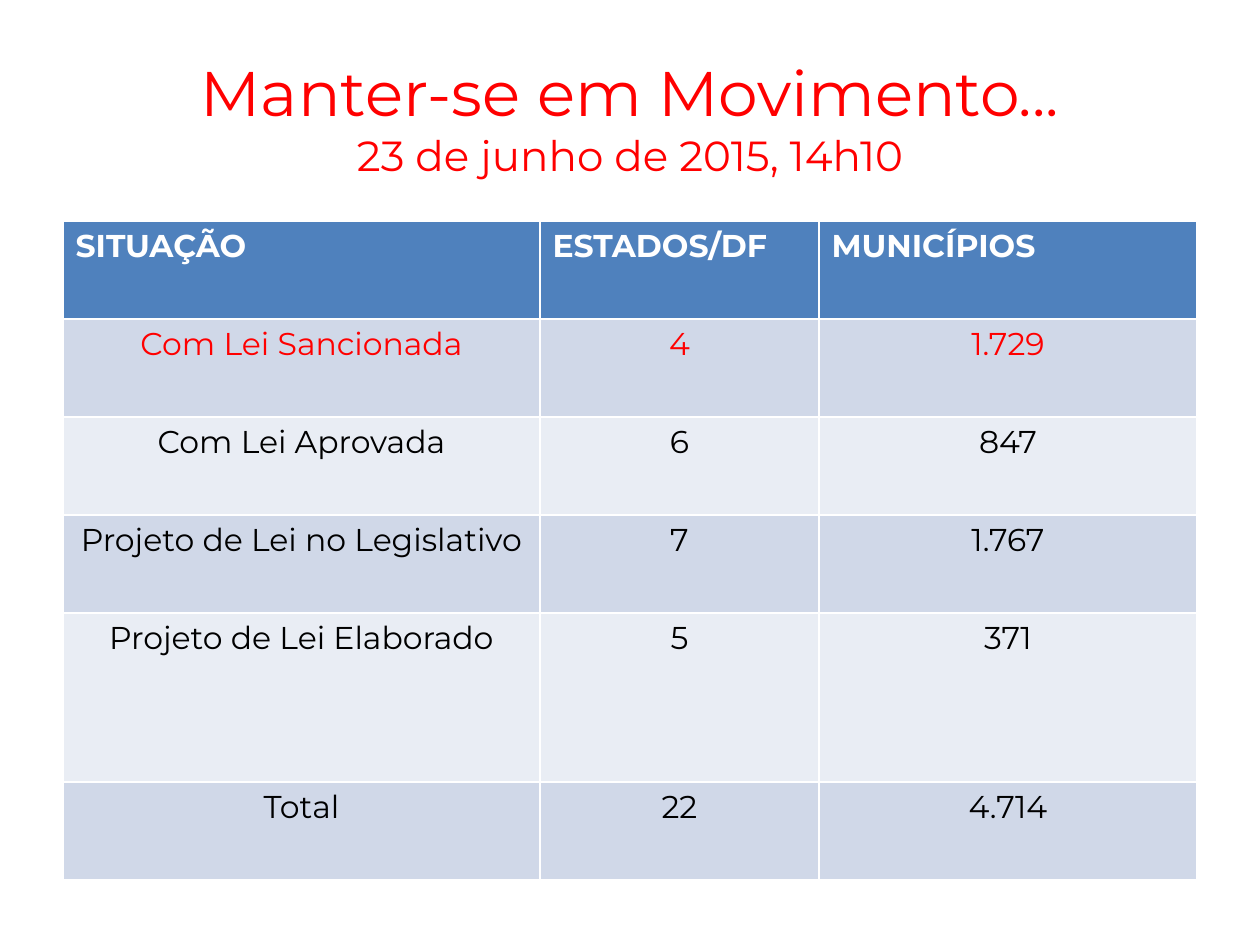
from pptx import Presentation
from pptx.dml.color import RGBColor
from pptx.enum.text import MSO_ANCHOR, PP_ALIGN
from pptx.util import Emu, Pt

MIDDLE = MSO_ANCHOR.MIDDLE
LEFT, CENTER = PP_ALIGN.LEFT, PP_ALIGN.CENTER

FONT = "Montserrat"
RED, WHITE, BLACK = "FF0000", "FFFFFF", "000000"
HEADER_FILL = "4F81BD"
BAND_FILLS = ["E9EDF4", "D0D8E8"]

TITLE_LINES = [("Manter-se em Movimento...", 36), ("23 de junho de 2015, 14h10", 24)]
ROWS = [
    ("SITUAÇÃO", "ESTADOS/DF", "MUNICÍPIOS"),
    ("Com Lei Sancionada", "4", "1.729"),
    ("Com Lei Aprovada", "6", "847"),
    ("Projeto de Lei no Legislativo", "7", "1.767"),
    ("Projeto de Lei Elaborado", "5", "371"),
    ("Total", "22", "4.714"),
]
ROW_COLORS = [WHITE, RED] + [BLACK] * 4
COLUMN_WIDTHS = [477, 279, 378]
ROW_HEIGHTS = [98, 98, 98, 98, 169, 98]


def px(length):
    return Emu(length * 914400 // 126)


def color(value):
    return RGBColor.from_string(value)


def style_font(font, size, value, bold=False):
    font.name = FONT
    font.size = Pt(size)
    font.bold = bold
    font.color.rgb = color(value)


def add_title(page):
    box = page.shapes.add_textbox(px(63), px(38), px(1134), px(157))
    frame = box.text_frame
    frame.word_wrap = True
    frame.vertical_anchor = MIDDLE
    para = frame.paragraphs[0]
    para.alignment = CENTER
    for index, (text, size) in enumerate(TITLE_LINES):
        if index:
            para.add_line_break()
        span = para.add_run()
        span.text = text
        style_font(span.font, size, RED)


def add_situation_table(page):
    table = page.shapes.add_table(
        len(ROWS), len(COLUMN_WIDTHS), px(63), px(221),
        px(sum(COLUMN_WIDTHS)), px(sum(ROW_HEIGHTS)),
    ).table
    for column, width in zip(table.columns, COLUMN_WIDTHS):
        column.width = px(width)
    for index, (texts, height) in enumerate(zip(ROWS, ROW_HEIGHTS)):
        is_header = index == 0
        row = table.rows[index]
        row.height = px(height)
        for cell, text in zip(row.cells, texts):
            cell.fill.solid()
            cell.fill.fore_color.rgb = color(HEADER_FILL if is_header else BAND_FILLS[index % 2])
            cell.text = text
            para = cell.text_frame.paragraphs[0]
            para.alignment = LEFT if is_header else CENTER
            style_font(para.font, 18, ROW_COLORS[index], is_header)


def main():
    deck = Presentation()
    deck.slide_width, deck.slide_height = px(1260), px(945)
    page = deck.slides.add_slide(deck.slide_layouts[6])
    add_title(page)
    add_situation_table(page)
    deck.save("out.pptx")


if __name__ == "__main__":
    main()
